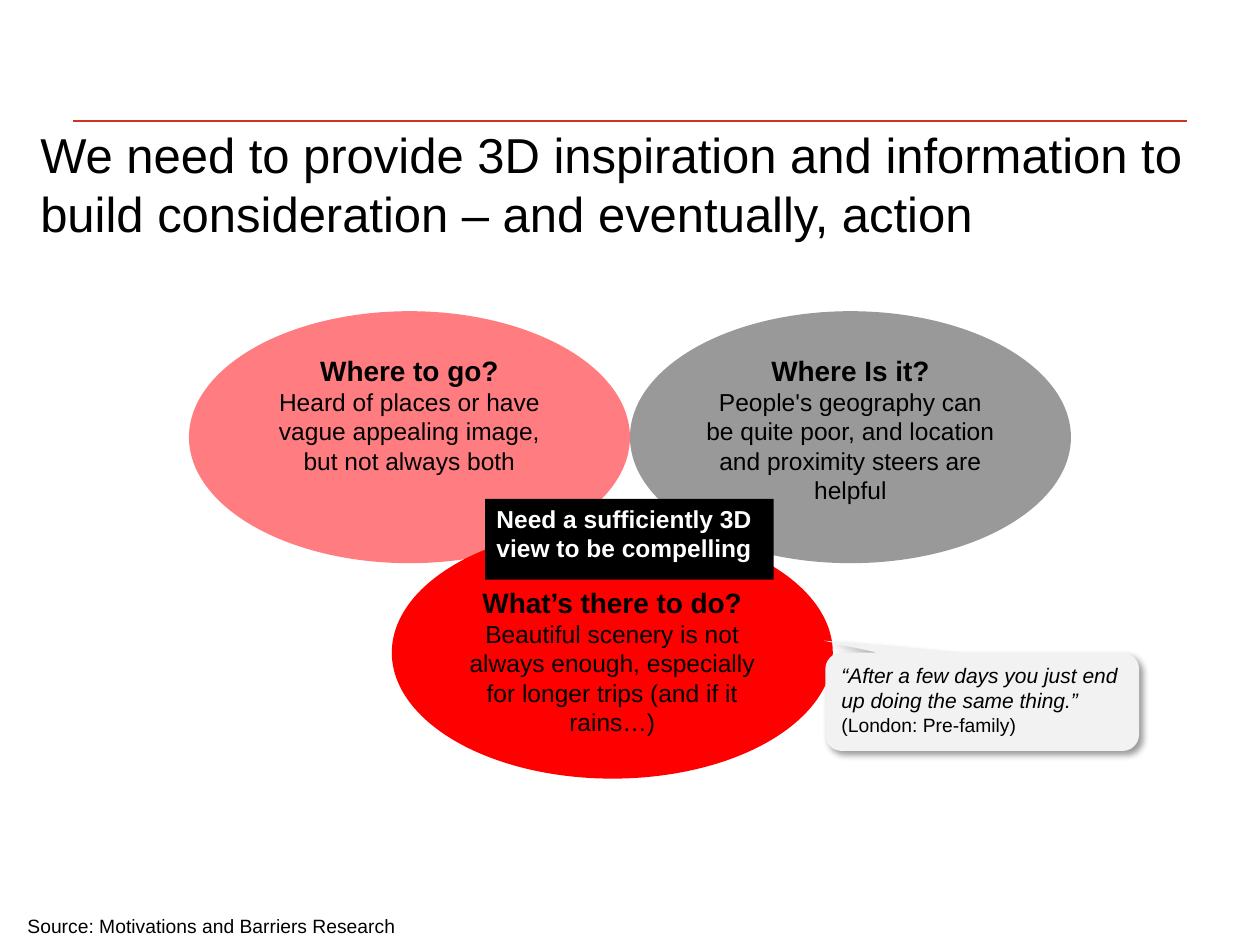
from lxml import etree
from pptx import Presentation
from pptx import util as u
from pptx.dml.color import RGBColor
from pptx.enum import shapes, text
from pptx.oxml import ns

COLOURS = {
    "rule": "CD3425", "ink": "000000", "white": "FFFFFF", "pink": "FF7C80",
    "grey": "999999", "red": "FF0000", "quote": "F2F2F2",
}


def write_text(box, lines, colour="ink", align=text.PP_ALIGN.LEFT,
               anchor=text.MSO_ANCHOR.TOP):
    """Fill a box with (wording, size, bold, italic) paragraphs."""
    frame = box.text_frame
    frame.word_wrap = True
    frame.vertical_anchor = anchor
    frame.margin_left = frame.margin_right = u.Inches(0.09)
    frame.margin_top = frame.margin_bottom = u.Inches(0.04)
    for index, (wording, size, bold, italic) in enumerate(lines):
        para = frame.paragraphs[0] if index == 0 else frame.add_paragraph()
        para.alignment = align
        span = para.add_run()
        span.text = wording
        span.font.name = "Arial"
        span.font.size = u.Pt(size)
        span.font.bold = bold
        span.font.italic = italic
        span.font.color.rgb = RGBColor.from_string(COLOURS[colour])


def add_filled(page, kind, bounds, fill):
    """Add a borderless, shadowless shape with a solid fill."""
    shape = page.shapes.add_shape(kind, *map(u.Inches, bounds))
    shape.shadow.inherit = False
    shape.fill.solid()
    shape.fill.fore_color.rgb = RGBColor.from_string(COLOURS[fill])
    shape.line.fill.background()
    return shape


deck = Presentation()
deck.slide_width = u.Inches(10)
deck.slide_height = u.Inches(7.5)
page = deck.slides.add_slide(deck.slide_layouts[6])

# Rule above the title
rule = page.shapes.add_connector(
    shapes.MSO_CONNECTOR.STRAIGHT,
    u.Inches(0.58), u.Inches(0.96), u.Inches(9.42), u.Inches(0.96))
rule.line.color.rgb = RGBColor.from_string(COLOURS["rule"])
rule.line.width = u.Pt(0.75)
etree.SubElement(rule.element.spPr, ns.qn("a:effectLst"))

# Title
title = page.shapes.add_textbox(
    u.Inches(0.23), u.Inches(0.95), u.Inches(9.54), u.Inches(1.25))
write_text(title, [("We need to provide 3D inspiration and information to build "
                    "consideration – and eventually, action", 28, False, False)])

# Three overlapping questions
questions = [
    (1.5, 2.47, "pink", text.MSO_ANCHOR.TOP, "Where to go?",
     "Heard of places or have vague appealing image, but not always both"),
    (5, 2.47, "grey", text.MSO_ANCHOR.TOP, "Where Is it?",
     "People's geography can be quite poor, and location and proximity "
     "steers are helpful"),
    (3.11, 4.18, "red", text.MSO_ANCHOR.BOTTOM, "What’s there to do?",
     "Beautiful scenery is not always enough, especially for longer trips "
     "(and if it rains…)"),
]
for left, top, fill, anchor, heading, detail in questions:
    ellipse = add_filled(page, shapes.MSO_SHAPE.OVAL, (left, top, 3.5, 2), fill)
    write_text(ellipse, [(heading, 16, True, False), (detail, 14, False, False)],
               align=text.PP_ALIGN.CENTER, anchor=anchor)

# Central message
message = add_filled(page, shapes.MSO_SHAPE.RECTANGLE, (3.85, 3.96, 2.29, 0.64), "ink")
write_text(message, [("Need a sufficiently 3D view to be compelling", 14, True, False)],
           colour="white")

# Quote callout with a soft shadow
quote = add_filled(page, shapes.MSO_SHAPE.ROUNDED_RECTANGULAR_CALLOUT,
                   (6.55, 5.18, 2.49, 0.78), "quote")
for index, value in enumerate((-0.505, -0.623, 0.167)):
    quote.adjustments[index] = value
write_text(quote, [
    ("“After a few days you just end up doing the same thing.”", 12, False, True),
    ("(London: Pre-family)", 11, False, False),
])
effects = quote.element.spPr.find(ns.qn("a:effectLst"))
shadow = etree.SubElement(
    effects, ns.qn("a:outerShdw"), blurRad=str(u.Pt(4)), dist=str(u.Pt(3)),
    dir=str(45 * 60000), algn="tl", rotWithShape="0")
shade = etree.SubElement(shadow, ns.qn("a:srgbClr"), val=COLOURS["ink"])
etree.SubElement(shade, ns.qn("a:alpha"), val="40000")

# Source line
source = page.shapes.add_textbox(
    u.Inches(0.12), u.Inches(7.21), u.Inches(5.2), u.Inches(0.29))
write_text(source, [("Source: Motivations and Barriers Research", 11, False, False)])
source.text_frame.margin_left = u.Inches(0.1)
source.text_frame.margin_top = u.Inches(0.05)

deck.save("out.pptx")
